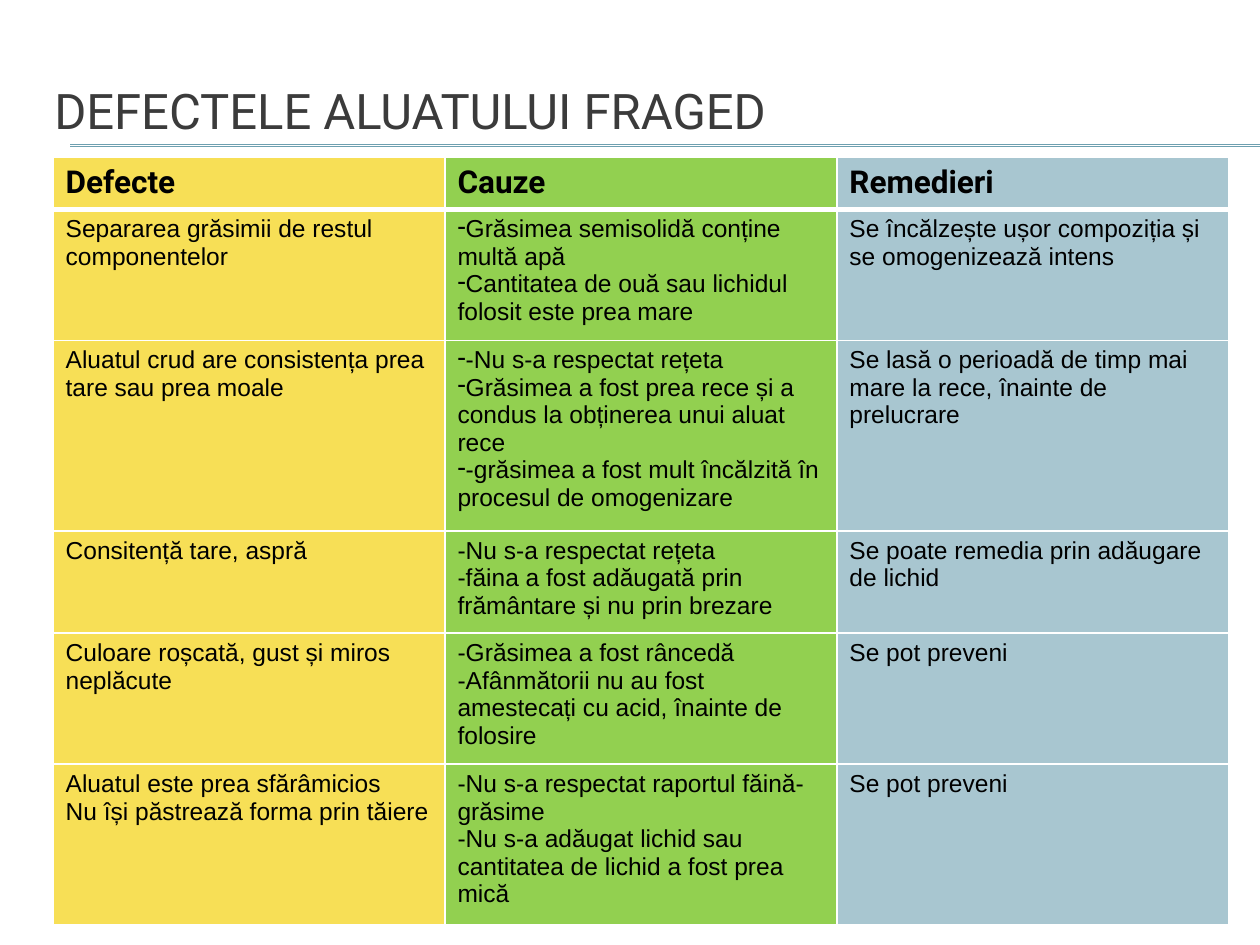
from dataclasses import dataclass

from lxml.etree import SubElement
from pptx import Presentation
from pptx.dml.color import RGBColor
from pptx.enum.shapes import MSO_CONNECTOR
from pptx.enum.text import MSO_ANCHOR, PP_ALIGN
from pptx.oxml import parse_xml
from pptx.oxml.ns import nsdecls, qn
from pptx.util import Cm, Pt


@dataclass(frozen=True)
class Theme:
    title: str = "3B3B3B"
    text: str = "000000"
    rule: str = "6EA0B0"
    border: str = "FFFFFF"
    columns: tuple = ("F7DF56", "92D050", "A8C6D0")
    head_font: str = "Roboto"
    body_font: str = "Arial"
    title_size: int = 28
    head_size: int = 18
    body_size: int = 14


theme = Theme()

HEADERS = ["Defecte", "Cauze", "Remedieri"]
# Each cell is a list of paragraphs
DEFECTS = [
    [["Separarea grăsimii de restul componentelor"],
     ["Grăsimea semisolidă conține multă apă",
      "Cantitatea de ouă sau lichidul folosit este prea mare"],
     ["Se încălzește ușor compoziția și se omogenizează intens"]],
    [["Aluatul crud are consistența prea tare sau prea moale"],
     ["-Nu s-a respectat rețeta",
      "Grăsimea a fost prea rece și a condus la obținerea unui aluat rece",
      "-grăsimea a fost mult încălzită în procesul de omogenizare"],
     ["Se lasă o perioadă de timp mai mare la rece, înainte de prelucrare"]],
    [["Consitență tare, aspră"],
     ["-Nu s-a respectat rețeta",
      "-făina a fost adăugată prin frământare și nu prin brezare"],
     ["Se poate remedia prin adăugare de lichid"]],
    [["Culoare roșcată, gust și miros neplăcute"],
     ["-Grăsimea a fost râncedă",
      "-Afânmătorii nu au fost amestecați cu acid, înainte de folosire"],
     ["Se pot preveni"]],
    [["Aluatul este prea sfărâmicios", "Nu își păstrează forma prin tăiere"],
     ["-Nu s-a respectat raportul făină-grăsime",
      "-Nu s-a adăugat lichid sau cantitatea de lichid a fost prea mică"],
     ["Se pot preveni"]],
]
BULLETED_ROWS = (1, 2)
CAUSE_COLUMN = 1
COLUMN_WIDTH = 7.9
ROW_HEIGHTS = [1.04, 2.64, 3.84, 2.06, 2.64, 3.25]


def add_run(p, text, font, size, color, bold=False):
    r = p.add_run()
    r.text = text
    r.font.name = font
    r.font.size = Pt(size)
    r.font.bold = bold
    r.font.color.rgb = RGBColor.from_string(color)


def set_borders(cell, bottom):
    """Draw 1 pt borders, with a bottom border of the given points."""
    tc_pr = cell._tc.get_or_add_tcPr()
    widths = {"lnL": 1, "lnR": 1, "lnT": 1, "lnB": bottom}
    for i, (side, width) in enumerate(widths.items()):
        tc_pr.insert(i, parse_xml(
            f'<a:{side} {nsdecls("a")} w="{Pt(width)}"><a:solidFill>'
            f'<a:srgbClr val="{theme.border}"/></a:solidFill></a:{side}>'))


prs = Presentation()
prs.slide_width, prs.slide_height = Cm(25.4), Cm(19.05)
s = prs.slides.add_slide(prs.slide_layouts[5])

# Double rule under the title
for y in (2.92, 2.95):
    rule = s.shapes.add_connector(
        MSO_CONNECTOR.STRAIGHT, Cm(1.42), Cm(y), prs.slide_width, Cm(y))
    rule.line.color.rgb = RGBColor.from_string(theme.rule)
    rule.line.width = Pt(0.75)
    SubElement(rule._element.spPr, qn("a:effectLst"))

# Title
title = s.shapes.title
title.left, title.top, title.width, title.height = Cm(0.84), Cm(1.27), Cm(24.13), Cm(1.9)
tf = title.text_frame
tf.word_wrap = True
tf.vertical_anchor = MSO_ANCHOR.MIDDLE
p = tf.paragraphs[0]
p.alignment = PP_ALIGN.LEFT
add_run(p, "DEFECTELE ALUATULUI FRAGED", theme.head_font, theme.title_size, theme.title)

# Table of defects, causes and remedies
rows = [[[header] for header in HEADERS]] + DEFECTS
table = s.shapes.add_table(
    len(rows), len(HEADERS), Cm(1.07), Cm(3.18),
    Cm(COLUMN_WIDTH * len(HEADERS)), Cm(sum(ROW_HEIGHTS))).table
for column in table.columns:
    column.width = Cm(COLUMN_WIDTH)

for i, (row, height) in enumerate(zip(rows, ROW_HEIGHTS)):
    table.rows[i].height = Cm(height)
    is_head = i == 0
    font = theme.head_font if is_head else theme.body_font
    size = theme.head_size if is_head else theme.body_size
    for j, paragraphs in enumerate(row):
        cell = table.cell(i, j)
        cell.fill.solid()
        cell.fill.fore_color.rgb = RGBColor.from_string(theme.columns[j])
        set_borders(cell, bottom=3 if is_head else 1)
        tf = cell.text_frame
        for n, text in enumerate(paragraphs):
            p = tf.add_paragraph() if n else tf.paragraphs[0]
            if i in BULLETED_ROWS and j == CAUSE_COLUMN:
                SubElement(p._p.get_or_add_pPr(), qn("a:buChar"), char="-")
            add_run(p, text, font, size, theme.text, bold=is_head)

prs.save("out.pptx")
